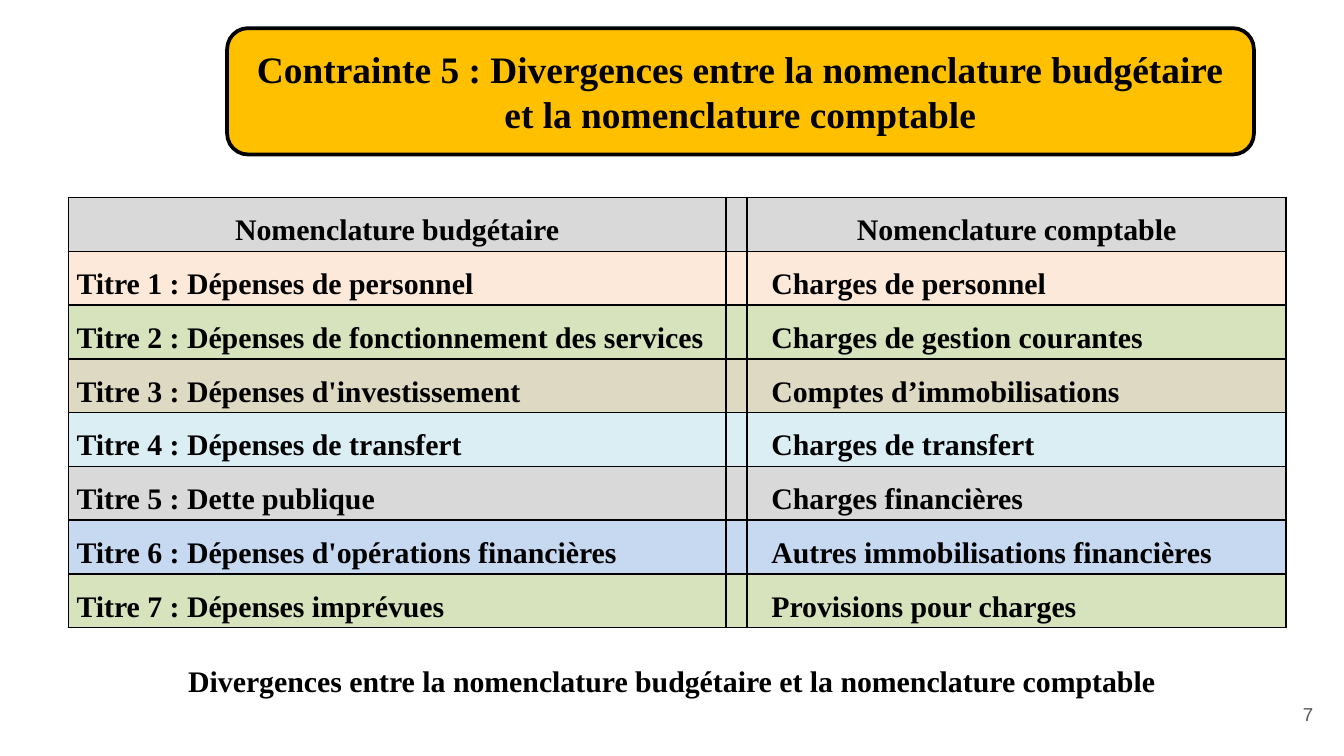
from typing import NamedTuple

from lxml import etree
from pptx import Presentation
from pptx.dml.color import RGBColor
from pptx.enum.shapes import MSO_SHAPE
from pptx.enum.text import MSO_ANCHOR, PP_ALIGN
from pptx.oxml.ns import qn
from pptx.util import Emu, Pt

ROUNDED = MSO_SHAPE.ROUNDED_RECTANGLE
MIDDLE, TOP = MSO_ANCHOR.MIDDLE, MSO_ANCHOR.TOP
LEFT, CENTER, RIGHT = PP_ALIGN.LEFT, PP_ALIGN.CENTER, PP_ALIGN.RIGHT

EMU_PER_PX = 9144  # 100 px to the inch
SLIDE_WIDTH = 1000
SERIF, SANS = "Times New Roman", "Arial"
BLACK, GREY, AMBER = "000000", "595959", "FFC000"
COLUMN_WIDTHS = (489, 16, 401)
ROW_HEIGHT = 40
ACCOUNT_INDENT = 12


class Box(NamedTuple):
    left: int
    top: int
    width: int
    height: int


class Style(NamedTuple):
    size: int
    font: str = SERIF
    color: str = BLACK
    bold: bool = True
    align: PP_ALIGN = CENTER


class Match(NamedTuple):
    """A budget heading, the accounting heading facing it, and the row colour."""
    budget: str
    account: str
    fill: str


HEADER = Match("Nomenclature budgétaire", "Nomenclature comptable", "D9D9D9")
MATCHES = (
    Match("Titre 1 : Dépenses de personnel", "Charges de personnel", "FDE9D9"),
    Match("Titre 2 : Dépenses de fonctionnement des services", "Charges de gestion courantes", "D6E3BC"),
    Match("Titre 3 : Dépenses d'investissement", "Comptes d’immobilisations", "DDD9C3"),
    Match("Titre 4 : Dépenses de transfert", "Charges de transfert", "DAEEF3"),
    Match("Titre 5 : Dette publique", "Charges financières", "D9D9D9"),
    Match("Titre 6 : Dépenses d'opérations financières", "Autres immobilisations financières", "C6D9F1"),
    Match("Titre 7 : Dépenses imprévues", "Provisions pour charges", "D6E3BC"),
)


def px(length: int) -> Emu:
    return Emu(length * EMU_PER_PX)


def place(box: Box) -> tuple:
    return tuple(px(length) for length in box)


def rgb(color: str) -> RGBColor:
    return RGBColor.from_string(color)


def write(holder, text: str, style: Style) -> None:
    """Fill a shape or cell with one paragraph."""
    paragraph = holder.text_frame.paragraphs[0]
    paragraph.text = text
    paragraph.alignment = style.align
    for run in paragraph.runs:
        run.font.size = Pt(style.size)
        run.font.name = style.font
        run.font.bold = style.bold
        run.font.color.rgb = rgb(style.color)


def set_margins(holder, horizontal: int, vertical: int) -> None:
    holder.margin_left = holder.margin_right = px(horizontal)
    holder.margin_top = holder.margin_bottom = px(vertical)


def add_label(slide, box: Box, text: str, style: Style, anchor, vertical_margin: int) -> None:
    label = slide.shapes.add_textbox(*place(box))
    label.text_frame.word_wrap = True
    label.text_frame.vertical_anchor = anchor
    set_margins(label.text_frame, 10, vertical_margin)
    write(label, text, style)


def add_title(slide, box: Box, text: str) -> None:
    banner = slide.shapes.add_shape(ROUNDED, *place(box))
    banner.shadow.inherit = False
    banner.fill.solid()
    banner.fill.fore_color.rgb = rgb(AMBER)
    banner.line.color.rgb = rgb(BLACK)
    banner.line.width = Pt(2)
    banner.text_frame.word_wrap = True
    banner.text_frame.vertical_anchor = MIDDLE
    write(banner, text, Style(20))


def add_borders(cell) -> None:
    properties = cell._tc.get_or_add_tcPr()
    for side in ("a:lnL", "a:lnR", "a:lnT", "a:lnB"):
        border = etree.SubElement(properties, qn(side), w=str(Pt(1)))
        fill = etree.SubElement(border, qn("a:solidFill"))
        etree.SubElement(fill, qn("a:srgbClr"), val=BLACK)


def fill_row(cells, match: Match, align: PP_ALIGN, indent: int) -> None:
    for cell, text in zip(cells, (match.budget, "", match.account)):
        add_borders(cell)
        cell.fill.solid()
        cell.fill.fore_color.rgb = rgb(match.fill)
        set_margins(cell, 6, 0)
        if text:
            write(cell, text, Style(16, align=align))
            cell.text_frame.paragraphs[0].line_spacing = 1.5
    account = cells[-1].text_frame.paragraphs[0]
    account._p.get_or_add_pPr().set("marL", str(px(indent)))


def add_matches(slide, left: int, top: int) -> None:
    row_count = len(MATCHES) + 1
    box = Box(left, top, sum(COLUMN_WIDTHS), row_count * ROW_HEIGHT)
    table = slide.shapes.add_table(row_count, len(COLUMN_WIDTHS), *place(box)).table
    table.first_row = table.horz_banding = False
    for column, width in zip(table.columns, COLUMN_WIDTHS):
        column.width = px(width)
    for row in table.rows:
        row.height = px(ROW_HEIGHT)
    header, *body = (list(row.cells) for row in table.rows)
    fill_row(header, HEADER, CENTER, 0)
    for cells, match in zip(body, MATCHES):
        fill_row(cells, match, LEFT, ACCOUNT_INDENT)


def main() -> None:
    presentation = Presentation()
    presentation.slide_width = px(SLIDE_WIDTH)
    presentation.slide_height = Emu(px(SLIDE_WIDTH) * 9 // 16)
    slide = presentation.slides.add_slide(presentation.slide_layouts[6])
    add_label(slide, Box(927, 510, 60, 43), "7", Style(10, SANS, GREY, False, RIGHT), MIDDLE, 10)
    add_title(slide, Box(169, 21, 764, 94),
              "Contrainte 5 : Divergences entre la nomenclature budgétaire et la nomenclature comptable")
    add_matches(slide, 51, 147)
    add_label(slide, Box(12, 488, 976, 37),
              "Divergences entre la nomenclature budgétaire et la nomenclature comptable",
              Style(16), TOP, 5)
    presentation.save("out.pptx")


if __name__ == "__main__":
    main()
